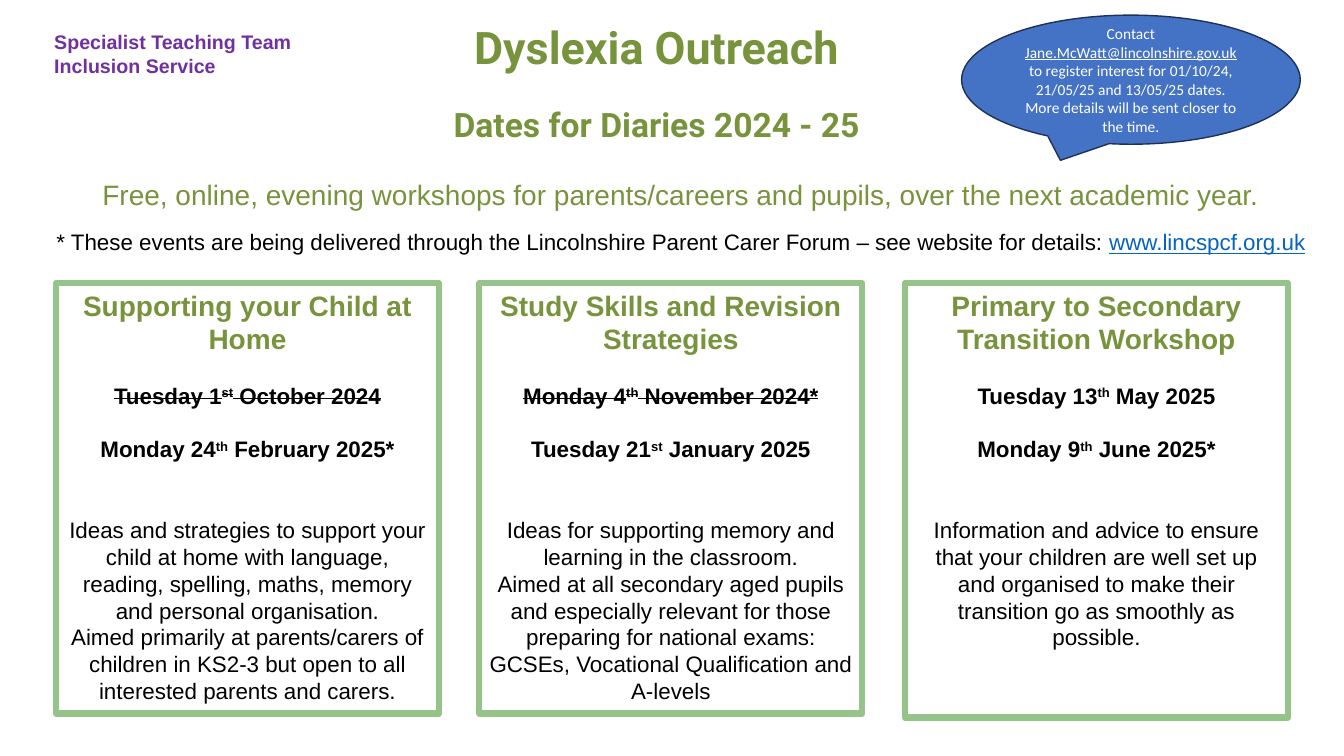
from pptx import Presentation
from pptx.dml.color import RGBColor
from pptx.enum.shapes import MSO_SHAPE
from pptx.enum.text import MSO_ANCHOR, MSO_AUTO_SIZE, PP_ALIGN
from pptx.util import Pt

GREEN = RGBColor(0x77, 0x93, 0x3C)
BORDER_GREEN = RGBColor(0x95, 0xC3, 0x89)
PURPLE = RGBColor(0x70, 0x30, 0xA0)
BLACK = RGBColor(0, 0, 0)
WHITE = RGBColor(0xFF, 0xFF, 0xFF)
LINK_BLUE = RGBColor(0x05, 0x63, 0xC1)
CALLOUT_BLUE = RGBColor(0x44, 0x72, 0xC4)
CALLOUT_LINE = RGBColor(0x1E, 0x32, 0x56)
LEFT, CENTER = PP_ALIGN.LEFT, PP_ALIGN.CENTER
TOP, MIDDLE = MSO_ANCHOR.TOP, MSO_ANCHOR.MIDDLE
NO_AUTOFIT = MSO_AUTO_SIZE.NONE
RECTANGLE, CALLOUT = MSO_SHAPE.RECTANGLE, MSO_SHAPE.OVAL_CALLOUT


def write(frame, texts, size, color, bold=False, before=0, font="Arial", align=CENTER):
    paragraph = frame.paragraphs[0]
    if paragraph.runs:
        paragraph = frame.add_paragraph()
    paragraph.alignment = align
    paragraph.space_before = Pt(before)
    paragraph.font.name = font
    paragraph.font.size = Pt(size)
    paragraph.font.bold = bold
    paragraph.font.color.rgb = color
    for text in texts:
        paragraph.add_run().text = text
    return paragraph.runs


presentation = Presentation()
presentation.slide_width, presentation.slide_height = Pt(960), Pt(540)
slide = presentation.slides.add_slide(presentation.slide_layouts[5])

title = slide.shapes.title
title.left, title.top, title.width, title.height = Pt(298), Pt(10.8), Pt(342), Pt(97.2)
title.text_frame.auto_size = NO_AUTOFIT
title.text_frame.vertical_anchor = TOP
write(title.text_frame, ["Dyslexia Outreach"], 32, GREEN, True, font="Roboto")
write(title.text_frame, ["Dates for Diaries 2024 - 25"], 24, GREEN, True, 21.5, "Roboto")

team = slide.shapes.add_textbox(Pt(31.7), Pt(18), Pt(184.3), Pt(41)).text_frame
team.word_wrap = False
for line in ["Specialist Teaching Team", "Inclusion Service"]:
    write(team, [line], 14, PURPLE, True, align=LEFT)

intro = slide.shapes.add_textbox(Pt(31.7), Pt(123.1), Pt(909.4), Pt(82)).text_frame
intro.word_wrap = True
write(intro, ["Free, online, evening workshops for parents/careers and pupils, "
              "over the next academic year."], 20, GREEN)
website = write(intro, ["* These events are being delivered through the Lincolnshire Parent Carer Forum "
                        "– see website for details: ", "www.lincspcf.org.uk"], 16, BLACK, before=12.5)[1]
website.font.color.rgb = LINK_BLUE
website.font.underline = True

workshops = [
    (40, 307.4, "Supporting your Child at Home",
     [("Tuesday 1", "st", " October 2024", True), ("Monday 24", "th", " February 2025*", False)],
     ["Ideas and strategies to support your child at home with language, reading, spelling, "
      "maths, memory and personal organisation.",
      "Aimed primarily at parents/carers of children in KS2-3 but open to all interested "
      "parents and carers."]),
    (342.4, 307.4, "Study Skills and Revision Strategies",
     [("Monday 4", "th", " November 2024*", True), ("Tuesday 21", "st", " January 2025", False)],
     ["Ideas for supporting memory and learning in the classroom.",
      "Aimed at all secondary aged pupils and especially relevant for those preparing for "
      "national exams: GCSEs, Vocational Qualification and A-levels"]),
    (646.4, 310.3, "Primary to Secondary Transition Workshop",
     [("Tuesday 13", "th", " May 2025", False), ("Monday 9", "th", " June 2025*", False)],
     ["Information and advice to ensure that your children are well set up and organised "
      "to make their transition go as smoothly as possible."]),
]
for left, height, heading, dates, details in workshops:
    card = slide.shapes.add_shape(RECTANGLE, Pt(left), Pt(202.3), Pt(273.6), Pt(height))
    card.shadow.inherit = False
    card.fill.background()
    card.line.color.rgb = BORDER_GREEN
    card.line.width = Pt(4.5)
    frame = card.text_frame
    frame.word_wrap = True
    frame.vertical_anchor = TOP
    write(frame, [heading], 20, GREEN, True)
    for day, ordinal, month, past in dates:
        runs = write(frame, [day, ordinal, month], 16, BLACK, True, 19)
        runs[1].font._element.set("baseline", "30000")
        if past:
            for run in runs:
                run.font._element.set("strike", "sngStrike")
    for index, detail in enumerate(details):
        write(frame, [detail], 16, BLACK, before=0 if index else 38.4)

callout = slide.shapes.add_shape(CALLOUT, Pt(686.9), Pt(10.8), Pt(241.9), Pt(92.2))
callout.shadow.inherit = False
callout.fill.solid()
callout.fill.fore_color.rgb = CALLOUT_BLUE
callout.line.color.rgb = CALLOUT_LINE
callout.line.width = Pt(1)
callout.text_frame.word_wrap = True
callout.text_frame.vertical_anchor = MIDDLE
email = write(callout.text_frame,
              ["Contact ", "Jane.McWatt@lincolnshire.gov.uk ",
               "to register interest for 01/10/24, 21/05/25 and 13/05/25 dates. "
               "More details will be sent closer to the time."], 11, WHITE, font="Calibri")[1]
email.font.underline = True

presentation.save("out.pptx")
